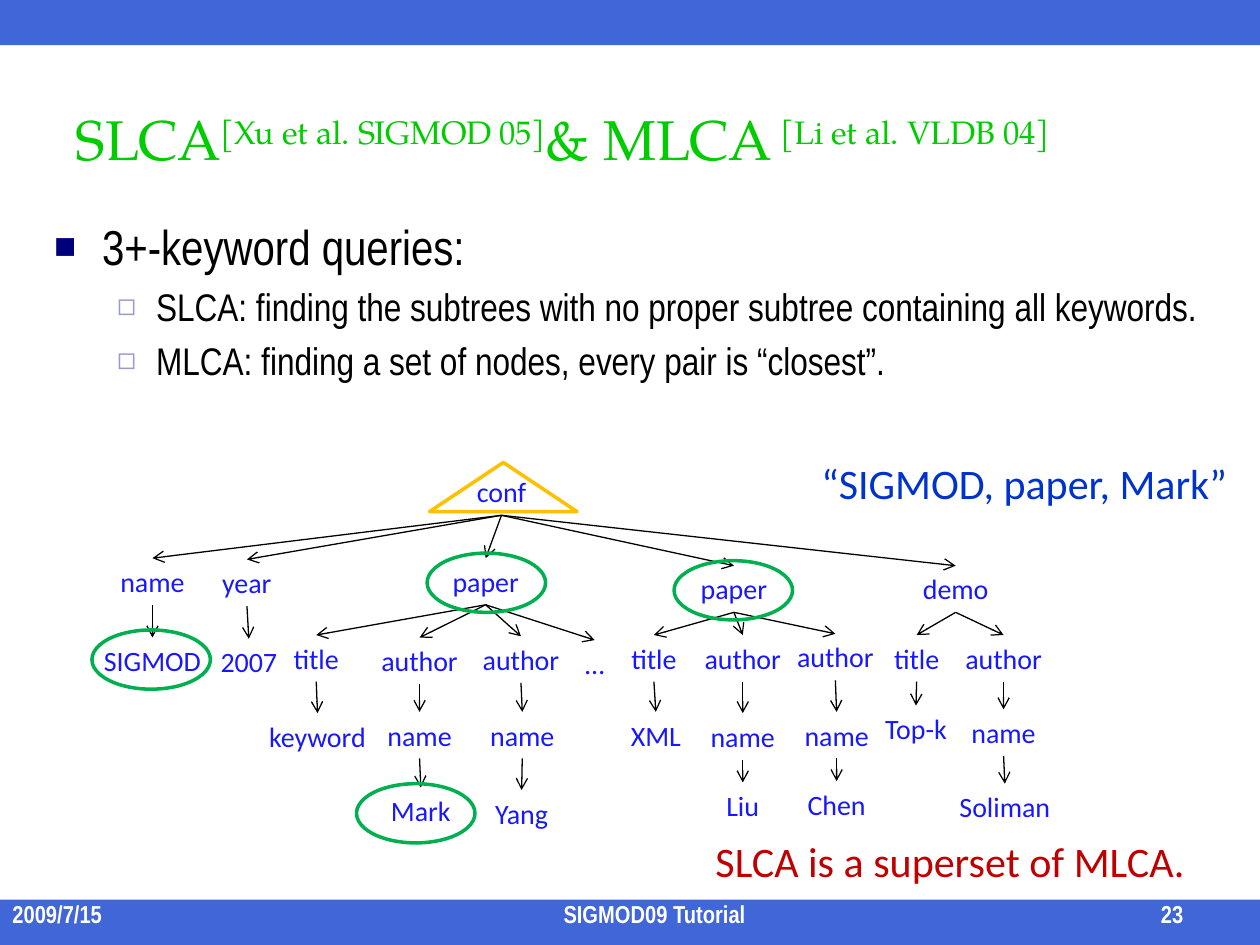
from collections import namedtuple

from lxml.etree import SubElement
from pptx import Presentation
from pptx.dml.color import RGBColor
from pptx.enum.shapes import MSO_CONNECTOR, MSO_SHAPE
from pptx.enum.text import MSO_ANCHOR as Anchor, MSO_AUTO_SIZE as AutoSize, PP_ALIGN as Align
from pptx.oxml.ns import qn
from pptx.util import Inches, Pt

COLORS = {
    "band": "0033CC", "title": "00CC00", "body": "000000", "bullet": "00007D",
    "sub_bullet": "9999CC", "footer": "FFFFFF", "node": "1818FF", "edge": "000000",
    "match": "00B050", "root": "FFC000", "query": "0033CC", "claim": "C00000",
}
SANS, NARROW, SERIF = "Calibri", "Arial Narrow", "TeX Gyre Pagella"
NODE_HEIGHT = 0.37

Node = namedtuple("Node", "text left top width children", defaults=[()])

# Node places are in inches from the top left corner of the tree.
TREE = Node("conf", 2.99, 0.05, 0.62, [
    Node("name", 0.15, 0.76, 0.76, [Node("SIGMOD", 0, 1.39, 1.06)]),
    Node("year", 0.95, 0.77, 0.66, [Node("2007", 0.83, 1.4, 0.93)]),
    Node("paper", 2.77, 0.76, 0.81, [
        Node("title", 1.48, 1.37, 0.7, [Node("keyword", 1.32, 1.99, 1.04)]),
        Node("author", 2.22, 1.39, 0.86, [
            Node("name", 2.24, 1.98, 0.82, [Node("Mark", 2.02, 2.58, 1.28)])]),
        Node("author", 3, 1.38, 0.91, [
            Node("name", 3.07, 1.98, 0.79, [Node("Yang", 3.11, 2.6, 0.7)])]),
        Node("…", 3.69, 1.41, 0.7),
    ]),
    Node("paper", 4.71, 0.82, 0.87, [
        Node("title", 4.16, 1.37, 0.7, [Node("XML", 4.05, 1.98, 0.95)]),
        Node("author", 4.76, 1.37, 0.91, [
            Node("name", 4.78, 1.99, 0.87, [Node("Liu", 4.8, 2.54, 0.83)])]),
        Node("author", 5.49, 1.36, 0.92, [
            Node("name", 5.52, 1.98, 0.88, [Node("Chen", 5.61, 2.53, 0.7)])]),
    ]),
    Node("demo", 6.49, 0.82, 0.83, [
        Node("title", 6.31, 1.37, 0.57, [Node("Top-k", 6.19, 1.93, 0.8)]),
        Node("author", 6.79, 1.37, 0.99, [
            Node("name", 6.85, 1.96, 0.87, [Node("Soliman", 6.77, 2.55, 1.05)])]),
    ]),
])
MATCHES = [(0.05, 1.33), (2.71, 0.72), (2.15, 2.55), (4.67, 0.78)]


def color(name):
    return RGBColor.from_string(COLORS[name])


def write(para, text, size, font, ink, bold=False, raised=0):
    """Add a run to the paragraph; raised is the superscript shift in percent."""
    span = para.add_run()
    span.text = text
    span.font.size = Pt(size)
    span.font.name = font
    span.font.bold = bold
    span.font.color.rgb = color(ink)
    if raised:
        span._r.get_or_add_rPr().set("baseline", str(raised * 1000))


def add_label(page, text, left, top, width, height, align=Align.LEFT,
              anchor=Anchor.TOP, **style):
    box = page.shapes.add_textbox(Inches(left), Inches(top), Inches(width), Inches(height))
    frame = box.text_frame
    frame.word_wrap = True
    frame.vertical_anchor = anchor
    para = frame.paragraphs[0]
    para.alignment = align
    write(para, text, **style)


def add_outline(page, kind, left, top, width, height, ink):
    shape = page.shapes.add_shape(kind, Inches(left), Inches(top), Inches(width), Inches(height))
    shape.shadow.inherit = False
    shape.fill.background()
    shape.line.color.rgb = color(ink)
    shape.line.width = Pt(2)


def add_arrow(page, start, end):
    arrow = page.shapes.add_connector(MSO_CONNECTOR.STRAIGHT, *map(Inches, start + end))
    arrow.line.color.rgb = color("edge")
    arrow.line.width = Pt(0.75)
    SubElement(arrow.line._get_or_add_ln(), qn("a:tailEnd"), type="arrow")
    SubElement(arrow._element.spPr, qn("a:effectLst"))


def add_band(page, top):
    band = page.shapes.add_shape(MSO_SHAPE.RECTANGLE, 0, Inches(top), Inches(10), Inches(0.36))
    band.shadow.inherit = False
    band.fill.solid()
    band.fill.fore_color.rgb = color("band")
    band.line.fill.background()
    SubElement(band._element.spPr.find(".//" + qn("a:srgbClr")), qn("a:alpha"), val="75000")


def place(holder, left, top, width, height, anchor):
    holder.left, holder.top = Inches(left), Inches(top)
    holder.width, holder.height = Inches(width), Inches(height)
    holder.text_frame.auto_size = AutoSize.NONE
    holder.text_frame.vertical_anchor = anchor


def fill_title(page, left, top, width, height):
    title = page.shapes.title
    place(title, left, top, width, height, Anchor.MIDDLE)
    para = title.text_frame.paragraphs[0]
    para.alignment = Align.LEFT
    for text, raised in [("SLCA", 0), ("[Xu et al. SIGMOD 05]", 30),
                         ("& MLCA", 0), (" [Li et al. VLDB 04]", 30)]:
        write(para, text, size=32, font=SERIF, ink="title", raised=raised)


def set_bullet(para, char, ink, percent, indent, hanging):
    props = para._p.get_or_add_pPr()
    props.set("marL", str(Inches(indent)))
    props.set("indent", str(-Inches(hanging)))
    SubElement(SubElement(props, qn("a:buClr")), qn("a:srgbClr"), val=COLORS[ink])
    SubElement(props, qn("a:buSzPct"), val=str(percent * 1000))
    SubElement(props, qn("a:buChar"), char=char)


def fill_body(page, left, top, width, height):
    body = page.placeholders[1]
    place(body, left, top, width, height, Anchor.TOP)
    frame = body.text_frame
    lines = [
        ("3+-keyword queries:", 0),
        ("SLCA: finding the subtrees with no proper subtree containing all keywords.", 1),
        ("MLCA: finding a set of nodes, every pair is “closest”.", 1),
    ]
    sizes = [28, 22]
    bullets = [("■", "bullet", 75, 0.38, 0.38), ("◻", "sub_bullet", 80, 0.81, 0.31)]
    for index, (text, level) in enumerate(lines):
        para = frame.add_paragraph() if index else frame.paragraphs[0]
        para.level = level
        para.space_before = Pt(sizes[level] * 0.2)
        set_bullet(para, *bullets[level])
        write(para, text, size=sizes[level], font=NARROW, ink="body")


def add_footer(page, top):
    for text, left, width, align in [("SIGMOD09 Tutorial", 2.32, 5.75, Align.CENTER),
                                     ("23", 8.23, 1.26, Align.RIGHT),
                                     ("2009/7/15", 0, 2.09, Align.LEFT)]:
        add_label(page, text, left, top, width, 0.24, align=align, anchor=Anchor.BOTTOM,
                  size=14, font=NARROW, ink="footer", bold=True)


def add_branch(page, node, left, top):
    """Draw a node, its subtree and the arrows to its children."""
    add_label(page, node.text, left + node.left, top + node.top, node.width, NODE_HEIGHT,
              align=Align.CENTER, size=16, font=SANS, ink="node")
    start = (left + node.left + node.width / 2, top + node.top + NODE_HEIGHT)
    for child in node.children:
        add_arrow(page, start, (left + child.left + child.width / 2, top + child.top))
        add_branch(page, child, left, top)


def add_tree(page, left, top):
    add_branch(page, TREE, left, top)
    for x, y in MATCHES:
        add_outline(page, MSO_SHAPE.OVAL, left + x, top + y, 0.94, 0.47, "match")
    add_outline(page, MSO_SHAPE.ISOSCELES_TRIANGLE, left + 2.73, top, 1.17, 0.39, "root")


def main():
    deck = Presentation()
    deck.slide_width, deck.slide_height = Inches(10), Inches(7.5)
    page = deck.slides.add_slide(deck.slide_layouts[1])
    for top in (7.14, 0):
        add_band(page, top)
    fill_title(page, 0.5, 0.5, 9, 1.2)
    fill_body(page, 0.33, 1.67, 9.33, 5.12)
    add_footer(page, 7.18)
    add_tree(page, 0.68, 3.67)
    add_label(page, "“SIGMOD, paper, Mark”", 6.42, 3.58, 3.58, 0.5,
              size=24, font=SANS, ink="query")
    add_label(page, "SLCA is a superset of MLCA.", 5.58, 6.58, 4.25, 0.5,
              size=24, font=SANS, ink="claim")
    deck.save("out.pptx")


if __name__ == "__main__":
    main()
